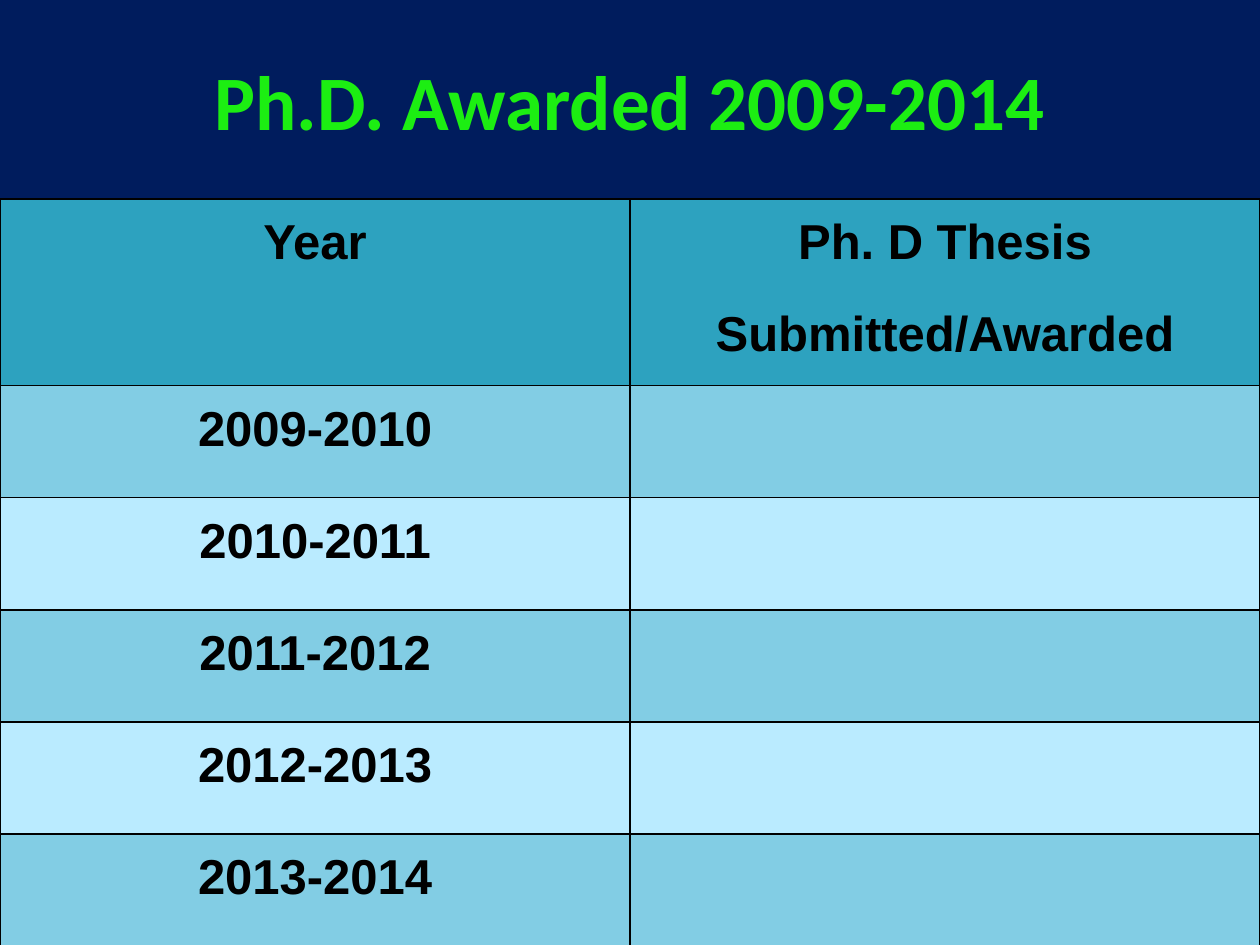
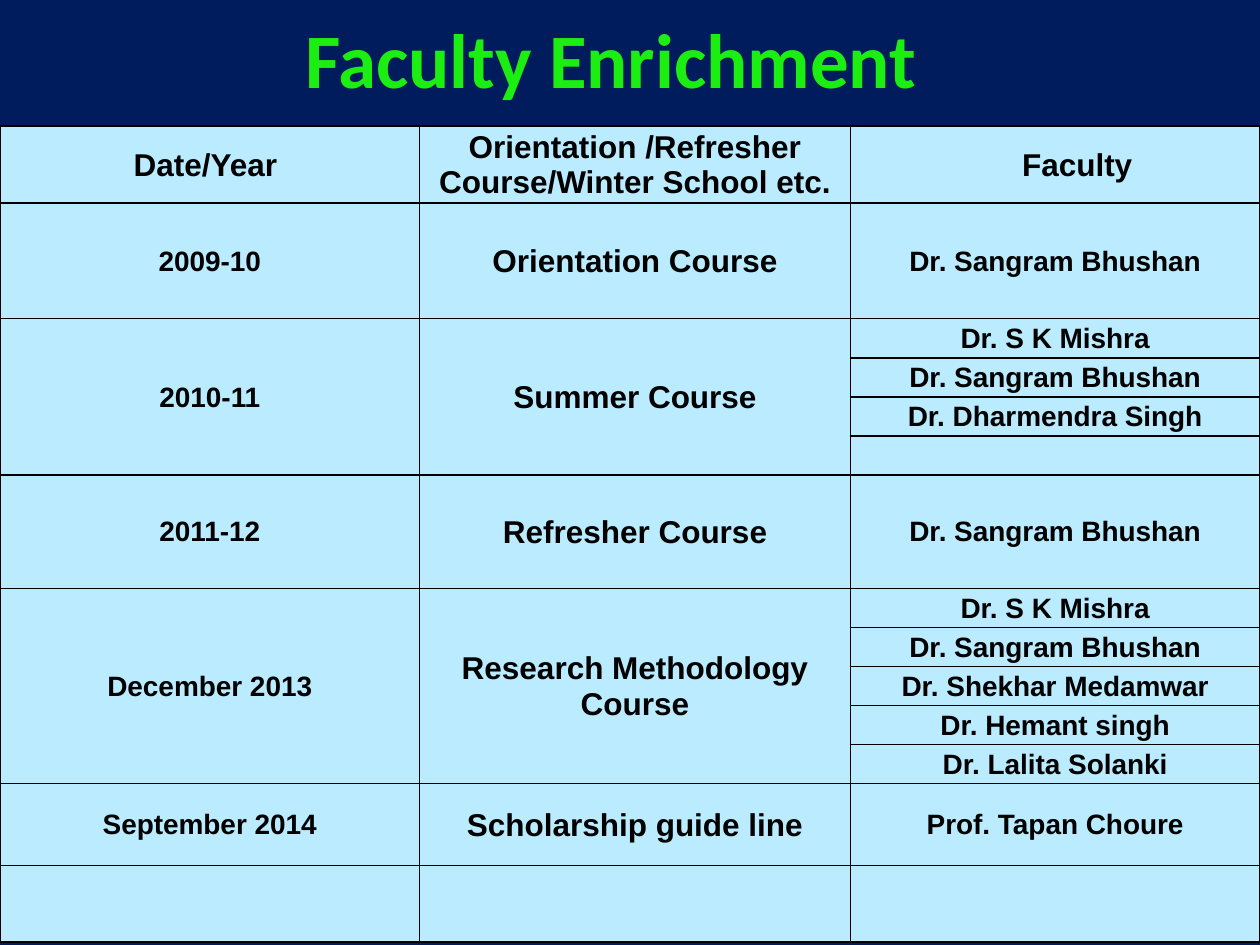
from lxml.etree import SubElement
from pptx import Presentation
from pptx.dml.color import RGBColor
from pptx.enum.text import MSO_ANCHOR as Anchor, PP_ALIGN as Align
from pptx.oxml import parse_xml
from pptx.oxml.ns import nsdecls, qn
from pptx.util import Inches, Pt

NAVY, GREEN, BLACK = "001C5D", "1CEE12", "000000"
TEAL, MID_BLUE, PALE_BLUE = "2DA2BF", "82CDE4", "BAEBFF"
TITLE_ONLY = 5
FACULTY_ROW = 0.31
THESIS_YEARS = ["2009-2010", "2010-2011", "2011-2012", "2012-2013", "2013-2014"]
COURSES = [
    ("2009-10", "Orientation Course", 0.92, ["Dr. Sangram Bhushan"]),
    ("2010-11", "Summer Course", FACULTY_ROW,
     ["Dr. S K Mishra", "Dr. Sangram Bhushan", "Dr. Dharmendra Singh", ""]),
    ("2011-12", "Refresher Course", 0.9, ["Dr. Sangram Bhushan"]),
    ("December 2013", "Research Methodology Course", FACULTY_ROW,
     ["Dr. S K Mishra", "Dr. Sangram Bhushan", "Dr. Shekhar Medamwar",
      "Dr. Hemant singh", "Dr. Lalita Solanki"]),
    ("September 2014", "Scholarship guide line", 0.65, ["Prof. Tapan Choure"]),
    ("", "", 0.61, [""]),
]


def color(value):
    return RGBColor.from_string(value)


def add_run(paragraph, text, font, size, font_color):
    run = paragraph.add_run()
    run.text = text
    run.font.name = font
    run.font.size = Pt(size)
    run.font.bold = True
    run.font.color.rgb = color(font_color)


def add_titled_slide(presentation, text, left, top):
    slide = presentation.slides.add_slide(presentation.slide_layouts[TITLE_ONLY])
    title = slide.shapes.title
    title.left, title.top = Inches(left), Inches(top)
    title.width, title.height = Inches(9), Inches(1.25)
    frame = title.text_frame
    frame.vertical_anchor = Anchor.MIDDLE
    paragraph = frame.paragraphs[0]
    paragraph.alignment = Align.CENTER
    add_run(paragraph, text, "Calibri", 44, GREEN)
    return slide


def add_table(slide, top, columns, rows):
    frame = slide.shapes.add_table(len(rows), len(columns), 0, Inches(top),
                                   Inches(sum(columns)), Inches(sum(rows)))
    table = frame.table
    table.first_row = table.horz_banding = False
    for column, width in zip(table.columns, columns):
        column.width = Inches(width)
    for row, height in zip(table.rows, rows):
        row.height = Inches(height)
    return table


def add_borders(cell):
    properties = cell._tc.get_or_add_tcPr()
    for index, side in enumerate(("lnL", "lnR", "lnT", "lnB")):
        properties.insert(index, parse_xml(
            f'<a:{side} {nsdecls("a")} w="{Pt(1)}"><a:solidFill>'
            f'<a:srgbClr val="{BLACK}"/></a:solidFill></a:{side}>'))


def style_cell(cell, fill, anchor, margins):
    cell.fill.solid()
    cell.fill.fore_color.rgb = color(fill)
    cell.vertical_anchor = anchor
    (cell.margin_left, cell.margin_top,
     cell.margin_right, cell.margin_bottom) = map(Inches, margins)
    add_borders(cell)


def write_cell(cell, lines, size, spaced=False):
    frame = cell.text_frame
    for index, line in enumerate(lines):
        paragraph = frame.add_paragraph() if index else frame.paragraphs[0]
        paragraph.alignment = Align.CENTER
        if spaced:
            paragraph.line_spacing = 1.3
            paragraph.space_before, paragraph.space_after = Pt(4), Pt(8)
        if line:
            add_run(paragraph, line, "Arial", size, BLACK)
        else:
            SubElement(paragraph._p, qn("a:endParaRPr"), sz=str(size * 100))


def build_thesis_slide(presentation):
    slide = add_titled_slide(presentation, "Ph.D. Awarded 2009-2014", 0.5, 0.17)
    table = add_table(slide, 1.58, [5, 5], [1.48] + [0.89] * len(THESIS_YEARS))
    content = [(["Year"], ["Ph. D Thesis", "Submitted/Awarded"])]
    content += [([year], [""]) for year in THESIS_YEARS]
    for row, cells in enumerate(content):
        fill = TEAL if row == 0 else (PALE_BLUE, MID_BLUE)[row % 2]
        for column, lines in enumerate(cells):
            cell = table.cell(row, column)
            style_cell(cell, fill, Anchor.TOP, (0.07, 0, 0.07, 0))
            write_cell(cell, lines, 28, spaced=True)


def build_faculty_slide(presentation):
    slide = add_titled_slide(presentation, "Faculty Enrichment ", 0.42, -0.17)
    heights = [0.61] + [height for _, _, height, names in COURSES for _ in names]
    table = add_table(slide, 1, [3.33, 3.42, 3.25], heights)
    for cell in table.iter_cells():
        style_cell(cell, PALE_BLUE, Anchor.MIDDLE, (0.01, 0.01, 0.01, 0))

    headings = ["Date/Year ", "Orientation /Refresher Course/Winter School etc.", "Faculty"]
    for column, heading in enumerate(headings):
        write_cell(table.cell(0, column), [heading], 18)
    table.cell(0, 2).margin_left = Inches(0.36)

    row = 1
    for date, course, _, names in COURSES:
        last_row = row + len(names) - 1
        for column, (text, size) in enumerate([(date, 16), (course, 18)]):
            cell = table.cell(row, column)
            if last_row > row:
                cell.merge(table.cell(last_row, column))
            write_cell(cell, [text], size)
        for offset, name in enumerate(names):
            write_cell(table.cell(row + offset, 2), [name], 16)
        row = last_row + 1


def main():
    presentation = Presentation()
    presentation.slide_width, presentation.slide_height = Inches(10), Inches(7.5)
    background = presentation.slide_master.background.fill
    background.solid()
    background.fore_color.rgb = color(NAVY)
    build_thesis_slide(presentation)
    build_faculty_slide(presentation)
    presentation.save("out.pptx")


if __name__ == "__main__":
    main()
